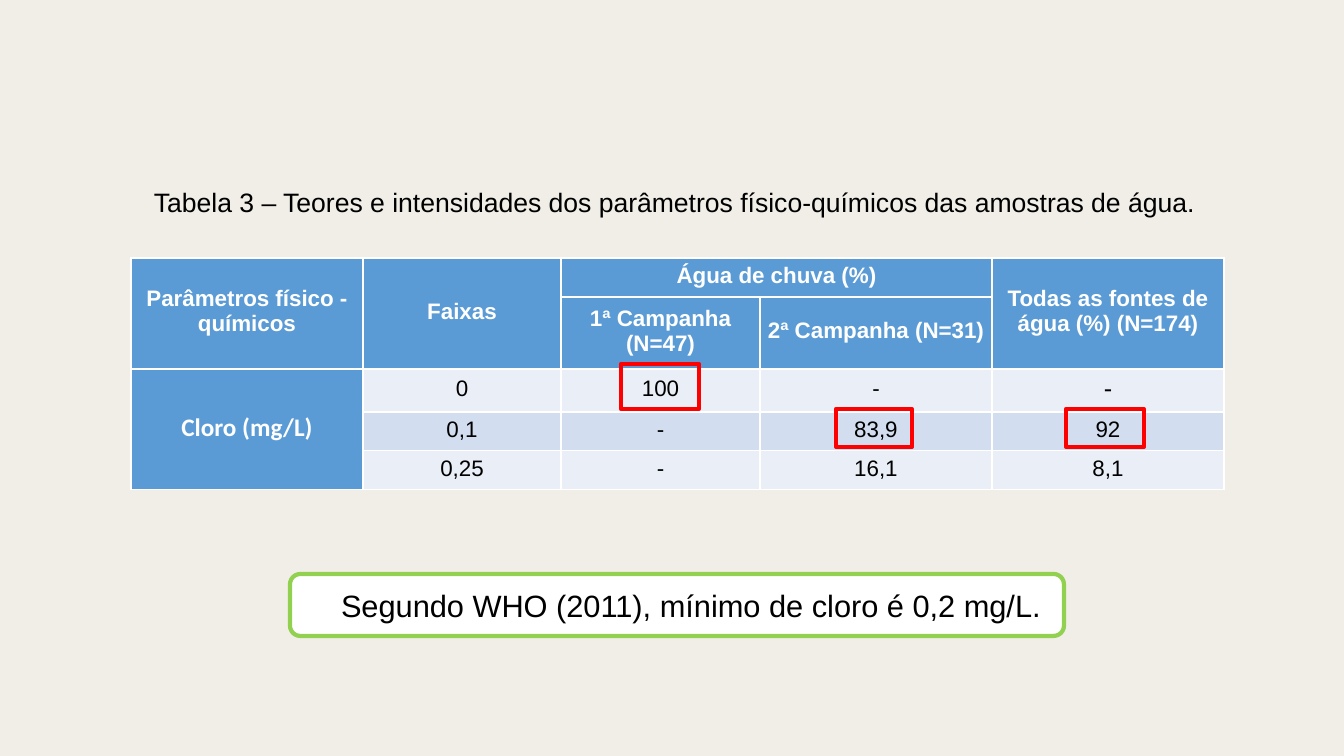
from dataclasses import dataclass

from lxml.etree import SubElement
from pptx import Presentation
from pptx.dml.color import RGBColor
from pptx.enum.shapes import MSO_SHAPE
from pptx.enum.text import MSO_ANCHOR, PP_ALIGN
from pptx.oxml.ns import qn
from pptx.util import Pt

CAPTION = "Tabela 3 – Teores e intensidades dos parâmetros físico-químicos das amostras de água."
NOTE = "Segundo WHO (2011), mínimo de cloro é 0,2 mg/L."
ROWS = [
    ["Parâmetros físico - químicos", "Faixas", "Água de chuva (%)", "",
     "Todas as fontes de água (%) (N=174)"],
    ["", "", "1ª Campanha (N=47)", "2ª Campanha (N=31)", ""],
    ["Cloro (mg/L)", "0", "100", "-", "-"],
    ["", "0,1", "-", "83,9", "92"],
    ["", "0,25", "-", "16,1", "8,1"],
]
HEADER_ROWS = 2
MERGES = [((0, 0), (1, 0)), ((0, 1), (1, 1)), ((0, 2), (0, 3)),
          ((0, 4), (1, 4)), ((2, 0), (4, 0))]
HEAVY_EDGES = {(0, 2): "B", (0, 3): "B", (1, 2): "LT", (1, 3): "RT"}

# Lengths in px: left, top, width, height
SLIDE_SIZE = (1344, 756)
CAPTION_BOX = (144, 181, 1067, 42)
NOTE_BOX = (290, 574, 774, 62)
NOTE_INDENT = 48
TABLE_ORIGIN = (131, 258)
COLUMN_WIDTHS = [232, 198, 199, 232, 232]
ROW_HEIGHTS = [39, 72, 43, 39, 39]
CELL_INSET, CELL_BOTTOM_INSET = 1, 5
HIGHLIGHTS = [(621, 364, 78, 45), (836, 409, 76, 38), (1066, 409, 78, 38)]


@dataclass(frozen=True)
class Theme:
    background: str = "F0EEE6"
    header: str = "5B9BD5"
    bands: tuple = ("EAEFF7", "D2DEEF")
    white: str = "FFFFFF"
    text: str = "000000"
    note_line: str = "92D050"
    highlight: str = "FF0000"
    font: str = "Arial"
    parameter_font: str = "Calibri"
    caption_size: int = 19
    note_size: int = 22
    cell_size: int = 16
    large_cell_size: int = 18
    outline: int = 3
    border: float = 1
    heavy_border: float = 1.5


THEME = Theme()
EMU_PER_PX = 12192000 / SLIDE_SIZE[0]


def px(*lengths):
    return [round(length * EMU_PER_PX) for length in lengths]


def rgb(color):
    return RGBColor.from_string(color)


def set_text(frame, text, size, color=THEME.text, name=THEME.font, bold=False, align=PP_ALIGN.LEFT):
    frame.word_wrap = True
    frame.vertical_anchor = MSO_ANCHOR.MIDDLE
    paragraph = frame.paragraphs[0]
    paragraph.text = text
    paragraph.alignment = align
    font = paragraph.font
    font.name, font.size, font.bold = name, Pt(size), bold
    font.color.rgb = rgb(color)


def add_outlined(slide, kind, box, line, fill=None):
    shape = slide.shapes.add_shape(kind, *px(*box))
    shape.shadow.inherit = False
    if fill:
        shape.fill.solid()
        shape.fill.fore_color.rgb = rgb(fill)
    else:
        shape.fill.background()
    shape.line.color.rgb = rgb(line)
    shape.line.width = Pt(THEME.outline)
    return shape


def set_borders(cell, heavy):
    """Draw white borders; the sides named in heavy are thicker."""
    properties = cell._tc.get_or_add_tcPr()
    for side in "LRTB":
        width = THEME.heavy_border if side in heavy else THEME.border
        line = SubElement(properties, qn(f"a:ln{side}"), w=str(Pt(width)))
        solid = SubElement(line, qn("a:solidFill"))
        SubElement(solid, qn("a:srgbClr"), val=THEME.white)


def add_results_table(slide):
    size = (sum(COLUMN_WIDTHS), sum(ROW_HEIGHTS))
    table = slide.shapes.add_table(len(ROWS), len(COLUMN_WIDTHS), *px(*TABLE_ORIGIN, *size)).table
    for column, width in zip(table.columns, px(*COLUMN_WIDTHS)):
        column.width = width
    for row, height in zip(table.rows, px(*ROW_HEIGHTS)):
        row.height = height
    for first, last in MERGES:
        table.cell(*first).merge(table.cell(*last))

    for r, values in enumerate(ROWS):
        for c, value in enumerate(values):
            cell = table.cell(r, c)
            is_header = r < HEADER_ROWS or c == 0
            is_parameter = c == 0 and r >= HEADER_ROWS
            is_large = is_parameter or (r, c) == (HEADER_ROWS, 4)
            set_borders(cell, HEAVY_EDGES.get((r, c), ""))
            cell.fill.solid()
            band = THEME.bands[(r - HEADER_ROWS) % 2]
            cell.fill.fore_color.rgb = rgb(THEME.header if is_header else band)
            cell.margin_left, cell.margin_right, cell.margin_top, cell.margin_bottom = px(
                CELL_INSET, CELL_INSET, CELL_INSET, CELL_BOTTOM_INSET)
            cell.vertical_anchor = MSO_ANCHOR.MIDDLE
            set_text(cell.text_frame, value,
                     THEME.large_cell_size if is_large else THEME.cell_size,
                     THEME.white if is_header else THEME.text,
                     THEME.parameter_font if is_parameter else THEME.font,
                     is_header, PP_ALIGN.CENTER)


def main():
    presentation = Presentation()
    presentation.slide_width, presentation.slide_height = px(*SLIDE_SIZE)
    slide = presentation.slides.add_slide(presentation.slide_layouts[6])
    slide.background.fill.solid()
    slide.background.fill.fore_color.rgb = rgb(THEME.background)

    note = add_outlined(slide, MSO_SHAPE.ROUNDED_RECTANGLE, NOTE_BOX, THEME.note_line, THEME.white)
    set_text(note.text_frame, NOTE, THEME.note_size)
    note.text_frame.margin_left, note.text_frame.margin_right = px(NOTE_INDENT, 0)

    caption = slide.shapes.add_textbox(*px(*CAPTION_BOX))
    set_text(caption.text_frame, CAPTION, THEME.caption_size)

    add_results_table(slide)
    for box in HIGHLIGHTS:
        add_outlined(slide, MSO_SHAPE.RECTANGLE, box, THEME.highlight)
    presentation.save("out.pptx")


if __name__ == "__main__":
    main()
